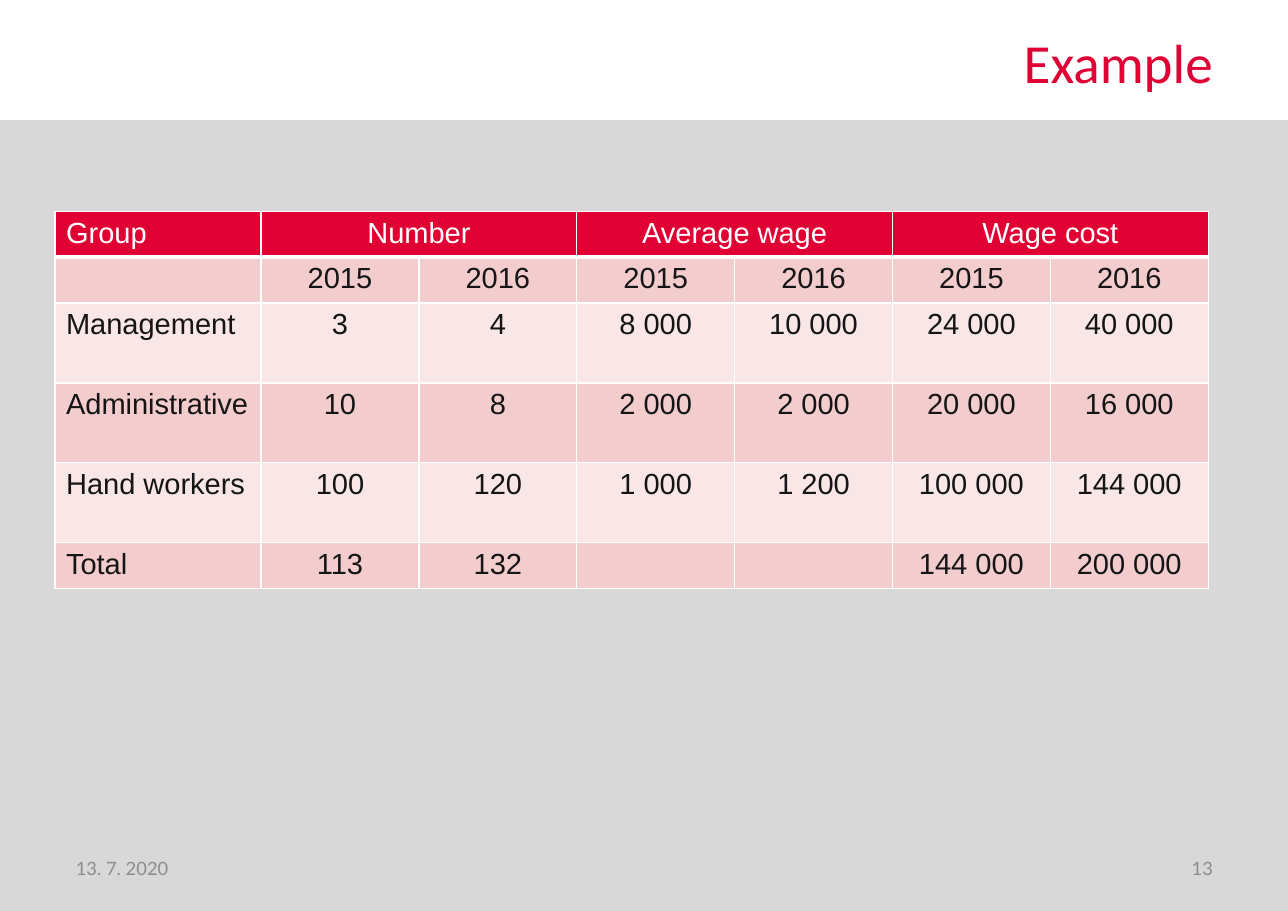
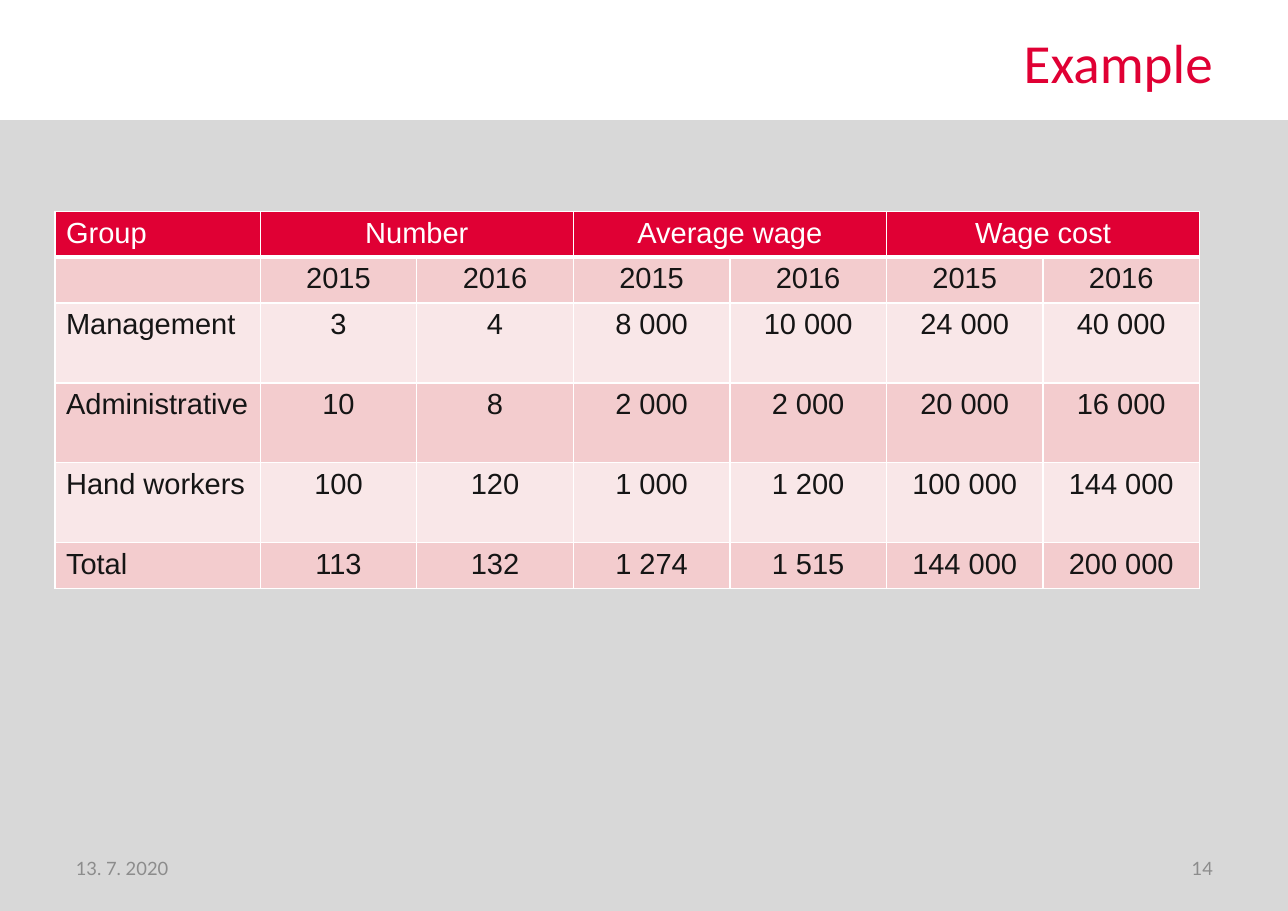
from dataclasses import dataclass

from lxml import etree
from pptx import Presentation
from pptx import util as u
from pptx.dml.color import RGBColor
from pptx.enum import shapes, text
from pptx.oxml import ns

# Shared look
RED, WHITE, GREY = "E00034", "FFFFFF", "D8D8D8"
INK, NOTE = "151515", "8C8C8C"
DARK, LIGHT = "F3CCCE", "F9E7E8"
WIDE, HIGH = u.Cm(29.7), u.Cm(21)
LEFT, CENTER, RIGHT = text.PP_ALIGN.LEFT, text.PP_ALIGN.CENTER, text.PP_ALIGN.RIGHT

# Table content
HEADS = ["Number", "Average wage", "Wage cost"]
YEARS = ["2015", "2016"]
ROWS = [
    ["Management", "3", "4", "8 000", "10 000", "24 000", "40 000"],
    ["Administrative", "10", "8", "2 000", "2 000", "20 000", "16 000"],
    ["Hand workers", "100", "120", "1 000", "1 200", "100 000", "144 000"],
]
TALL = [1.05, 1.05, 1.84, 1.84, 1.84, 1.05]


@dataclass
class Style:
    font: str
    size: float
    color: str


TITLE = Style("Calibri", 36, RED)
FOOT = Style("Lato", 12, NOTE)
HEAD = Style("Arial", 19, WHITE)
BODY = Style("Arial", 19, INK)


@dataclass
class Page:
    number: str
    first: float  # width of the group column, cm
    other: float  # width of each value column, cm
    means: list[str]  # average wages in the total row


PAGES = [
    Page("13", 4.75, 3.64, ["", ""]),
    Page("14", 4.73, 3.61, ["1 274", "1 515"]),
]


def paint(target, color: str) -> None:
    """Give a shape or cell a solid fill."""
    target.fill.solid()
    target.fill.fore_color.rgb = RGBColor.from_string(color)


def write(frame, words: str, style: Style, align) -> None:
    par = frame.paragraphs[0]
    par.alignment = align
    run = par.add_run()
    run.text = words
    run.font.name = style.font
    run.font.size = u.Pt(style.size)
    run.font.color.rgb = RGBColor.from_string(style.color)


def edge(cell, base: float) -> None:
    """Draw white cell borders; base is the bottom width in points."""
    props = cell._tc.get_or_add_tcPr()
    for side, width in (("L", 1), ("R", 1), ("T", 1), ("B", base)):
        line = etree.SubElement(props, ns.qn(f"a:ln{side}"), w=str(u.Pt(width)))
        fill = etree.SubElement(line, ns.qn("a:solidFill"))
        etree.SubElement(fill, ns.qn("a:srgbClr"), val=WHITE)


def add_foot(slide, left: float, words: str, align) -> None:
    box = slide.shapes.add_textbox(u.Cm(left), u.Cm(19.46), u.Cm(6.93), u.Cm(1.12))
    box.text_frame.word_wrap = True
    box.text_frame.vertical_anchor = text.MSO_ANCHOR.MIDDLE
    write(box.text_frame, words, FOOT, align)


def add_frame(slide, number: str) -> None:
    """Add the band, title and footers that every slide has."""
    top = u.Cm(2.77)
    band = slide.shapes.add_shape(
        shapes.MSO_SHAPE.RECTANGLE, 0, top, WIDE, HIGH - top)
    band.shadow.inherit = False
    band.line.fill.background()
    paint(band, GREY)

    title = slide.shapes.title
    title.left, title.top = u.Cm(7.6), u.Cm(0.5)
    title.width, title.height = u.Cm(20.62), u.Cm(1.83)
    title.text_frame.vertical_anchor = text.MSO_ANCHOR.MIDDLE
    write(title.text_frame, "Example", TITLE, RIGHT)

    add_foot(slide, 1.5, "13. 7. 2020", LEFT)
    add_foot(slide, 21.29, number, RIGHT)


def add_wages(slide, page: Page) -> None:
    head = ["Group"]
    for name in HEADS:
        head += [name, ""]
    total = ["Total", "113", "132", *page.means, "144 000", "200 000"]
    data = [head, ["", *YEARS * len(HEADS)], *ROWS, total]
    wide = [page.first] + [page.other] * (len(head) - 1)

    grid = slide.shapes.add_table(
        len(data), len(head), u.Cm(1.27), u.Cm(4.87),
        u.Cm(sum(wide)), u.Cm(sum(TALL))).table
    for col, width in zip(grid.columns, wide):
        col.width = u.Cm(width)
    for row, height in zip(grid.rows, TALL):
        row.height = u.Cm(height)

    # Cells: red header, then two alternating tints
    for i, line in enumerate(data):
        tint = RED if i == 0 else DARK if i % 2 else LIGHT
        for j, words in enumerate(line):
            cell = grid.cell(i, j)
            edge(cell, 1 if i else 3)
            paint(cell, tint)
            if words:
                write(cell.text_frame, words, BODY if i else HEAD,
                      CENTER if j else LEFT)

    # Each heading spans its two years
    for j in range(1, len(head), len(YEARS)):
        grid.cell(0, j).merge(grid.cell(0, j + 1))


def main() -> None:
    deck = Presentation()
    deck.slide_width, deck.slide_height = WIDE, HIGH
    for page in PAGES:
        slide = deck.slides.add_slide(deck.slide_layouts[5])
        add_frame(slide, page.number)
        add_wages(slide, page)
    deck.save("out.pptx")


if __name__ == "__main__":
    main()
